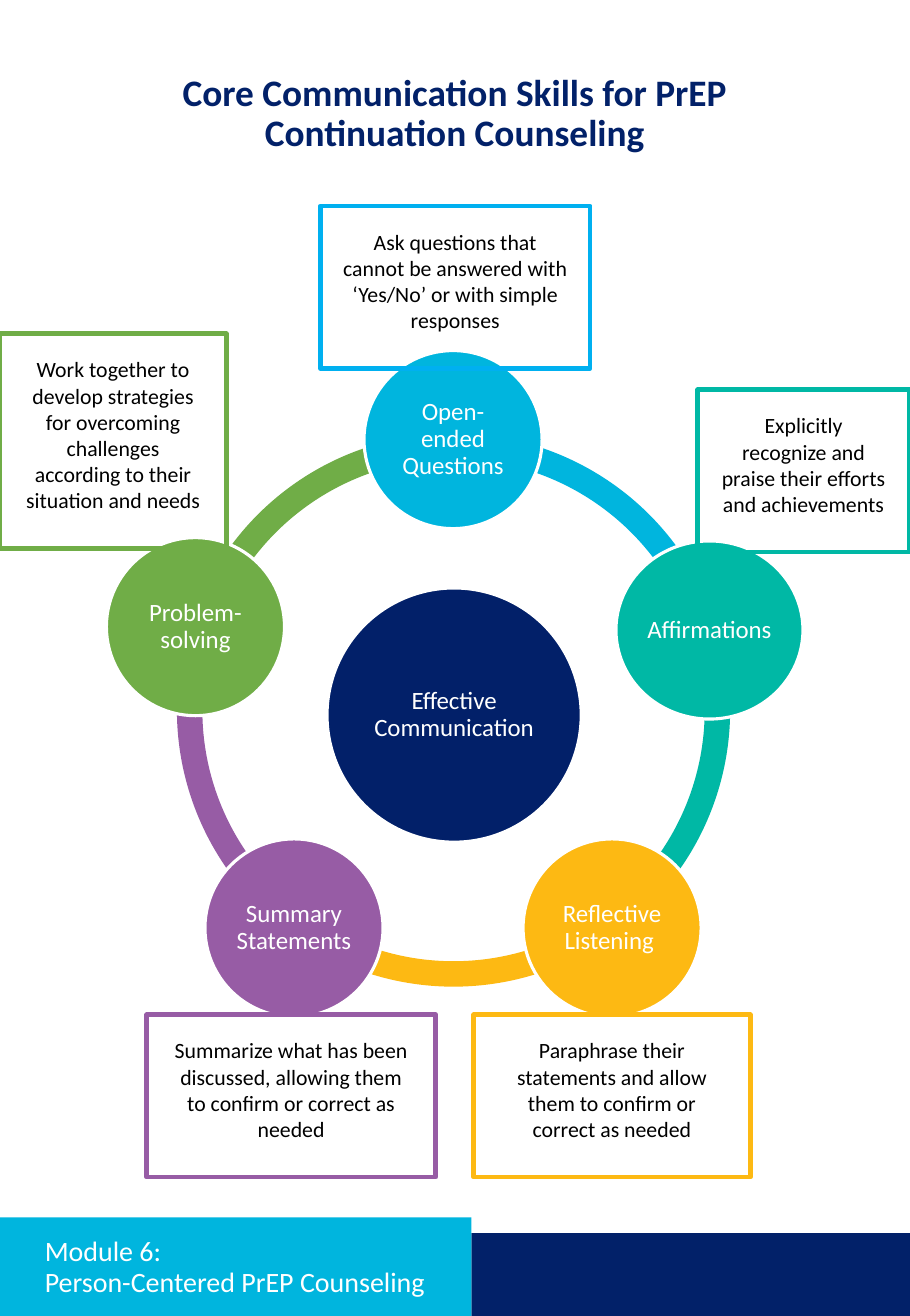
from dataclasses import dataclass

import pptx
import pptx.dml.color
import pptx.enum.shapes
import pptx.enum.text
import pptx.util
from pptx.util import Inches

SHAPE = pptx.enum.shapes.MSO_SHAPE
ALIGN = pptx.enum.text.PP_ALIGN
ANCHOR = pptx.enum.text.MSO_ANCHOR
AUTO_SIZE = pptx.enum.text.MSO_AUTO_SIZE


@dataclass(frozen=True)
class Theme:
    font: str = "Calibri"
    navy: str = "022169"
    hub: str = "022069"
    cyan: str = "00B5DE"
    sky: str = "00B0F0"
    teal: str = "00B8A5"
    gold: str = "FDB913"
    purple: str = "975CA5"
    green: str = "70AD47"
    white: str = "FFFFFF"
    black: str = "000000"
    heading_size: int = 24
    module_size: int = 18
    circle_size: int = 16
    note_size: int = 14


THEME = Theme()


@dataclass(frozen=True)
class Area:
    left: float
    top: float
    width: float
    height: float

    def lengths(self) -> tuple:
        return tuple(Inches(n) for n in (self.left, self.top, self.width, self.height))


@dataclass(frozen=True)
class Skill:
    name: str
    color: str
    circle: Area
    note: str
    note_area: Area
    note_line: str


# Skills run clockwise from the top of the ring
SKILLS = [
    Skill("Open-ended Questions", THEME.cyan, Area(3.25, 3.13, 1.59, 1.59),
          "Ask questions that cannot be answered with ‘Yes/No’ or with simple responses",
          Area(2.86, 1.84, 2.41, 1.45), THEME.sky),
    Skill("Affirmations", THEME.teal, Area(5.5, 4.83, 1.67, 1.59),
          "Explicitly recognize and praise their efforts and achievements",
          Area(6.23, 3.48, 1.89, 1.45), THEME.teal),
    Skill("Reflective Listening ", THEME.gold, Area(4.67, 7.49, 1.59, 1.59),
          "Paraphrase their statements and allow them to confirm or correct as needed",
          Area(4.23, 9.06, 2.47, 1.45), THEME.gold),
    Skill("Summary Statements", THEME.purple, Area(1.83, 7.49, 1.59, 1.59),
          "Summarize what has been discussed, allowing them to confirm or correct as needed",
          Area(1.31, 9.06, 2.58, 1.45), THEME.purple),
    Skill("Problem-solving", THEME.green, Area(0.95, 4.8, 1.59, 1.59),
          "Work together to develop strategies for overcoming challenges "
          "according to their situation and needs",
          Area(0, 2.98, 2.02, 1.92), THEME.green),
]
RING = Area(1.58, 3.87, 4.94, 4.94)
RING_THICKNESS = 0.046
# Block arc adjustments count 0.6 per degree
ADJUSTMENT_PER_DEGREE = 0.6


def rgb(color: str) -> pptx.dml.color.RGBColor:
    return pptx.dml.color.RGBColor.from_string(color)


def add_shape(page, kind, area: Area, fill: str | None = None,
              line: str | None = None, line_width: float = 0):
    shape = page.shapes.add_shape(kind, *area.lengths())
    shape.shadow.inherit = False
    if fill:
        shape.fill.solid()
        shape.fill.fore_color.rgb = rgb(fill)
    else:
        shape.fill.background()
    if line:
        shape.line.color.rgb = rgb(line)
        shape.line.width = pptx.util.Pt(line_width)
    else:
        shape.line.fill.background()
    return shape


def write(shape, text: str, size: int, color: str, align=ALIGN.CENTER,
          anchor=ANCHOR.TOP, spacing: float = 1.0, bold: bool = False,
          insets: tuple = (0.1, 0.05, 0.1, 0.05)) -> None:
    frame = shape.text_frame
    frame.text = text
    frame.word_wrap = True
    frame.auto_size = AUTO_SIZE.NONE
    frame.vertical_anchor = anchor
    (frame.margin_left, frame.margin_top,
     frame.margin_right, frame.margin_bottom) = (Inches(n) for n in insets)
    for para in frame.paragraphs:
        para.alignment = align
        para.line_spacing = spacing
        for span in para.runs:
            span.font.name = THEME.font
            span.font.size = pptx.util.Pt(size)
            span.font.bold = bold
            span.font.color.rgb = rgb(color)


def add_arc(page, index: int, color: str) -> None:
    arc = add_shape(page, SHAPE.BLOCK_ARC, RING, color)
    start = (270 + 72 * index) % 360
    end = (start + 72) % 360
    arc.adjustments[0] = start * ADJUSTMENT_PER_DEGREE
    arc.adjustments[1] = end * ADJUSTMENT_PER_DEGREE
    arc.adjustments[2] = RING_THICKNESS


def add_circle(page, area: Area, text: str, color: str) -> None:
    circle = add_shape(page, SHAPE.OVAL, area, color, THEME.white, 2)
    write(circle, text, THEME.circle_size, THEME.white, anchor=ANCHOR.MIDDLE,
          spacing=0.9, insets=(0.02,) * 4)


def add_note(page, skill: Skill) -> None:
    note = add_shape(page, SHAPE.RECTANGLE, skill.note_area, line=skill.note_line, line_width=3)
    write(note, skill.note, THEME.note_size, THEME.black, insets=(0.2, 0.2, 0.2, 0.3))


def main() -> None:
    deck = pptx.Presentation()
    deck.slide_width, deck.slide_height = Inches(65 / 8), Inches(11.75)
    page = deck.slides.add_slide(deck.slide_layouts[5])

    # Footer bars
    add_shape(page, SHAPE.RECTANGLE, Area(4.21, 11.01, 3.92, 0.75), THEME.navy)
    add_shape(page, SHAPE.RECTANGLE, Area(0, 10.87, 4.21, 0.89), THEME.cyan)

    # Heading
    heading = page.shapes.add_textbox(*Area(0.61, 0.61, 6.9, 0.72).lengths())
    write(heading, "Core Communication Skills for PrEP Continuation Counseling",
          THEME.heading_size, THEME.navy, spacing=0.9, bold=True)

    # Ring, hub and skill circles
    for index, skill in enumerate(SKILLS):
        add_arc(page, index, skill.color)
    add_circle(page, Area(2.92, 5.25, 2.27, 2.27), "Effective Communication", THEME.hub)
    for skill in SKILLS:
        add_circle(page, skill.circle, skill.name, skill.color)

    # Explanatory notes
    for skill in SKILLS:
        add_note(page, skill)

    # Module title, brought in front of the footer bar
    title = page.shapes.title
    title.left, title.top, title.width, title.height = Area(0.3, 11.07, 3.86, 0.5).lengths()
    write(title, "Module 6: \vPerson-Centered PrEP Counseling", THEME.module_size,
          THEME.white, align=ALIGN.LEFT, anchor=ANCHOR.MIDDLE, spacing=0.9)
    title.element.getparent().append(title.element)

    deck.save("out.pptx")


if __name__ == "__main__":
    main()
